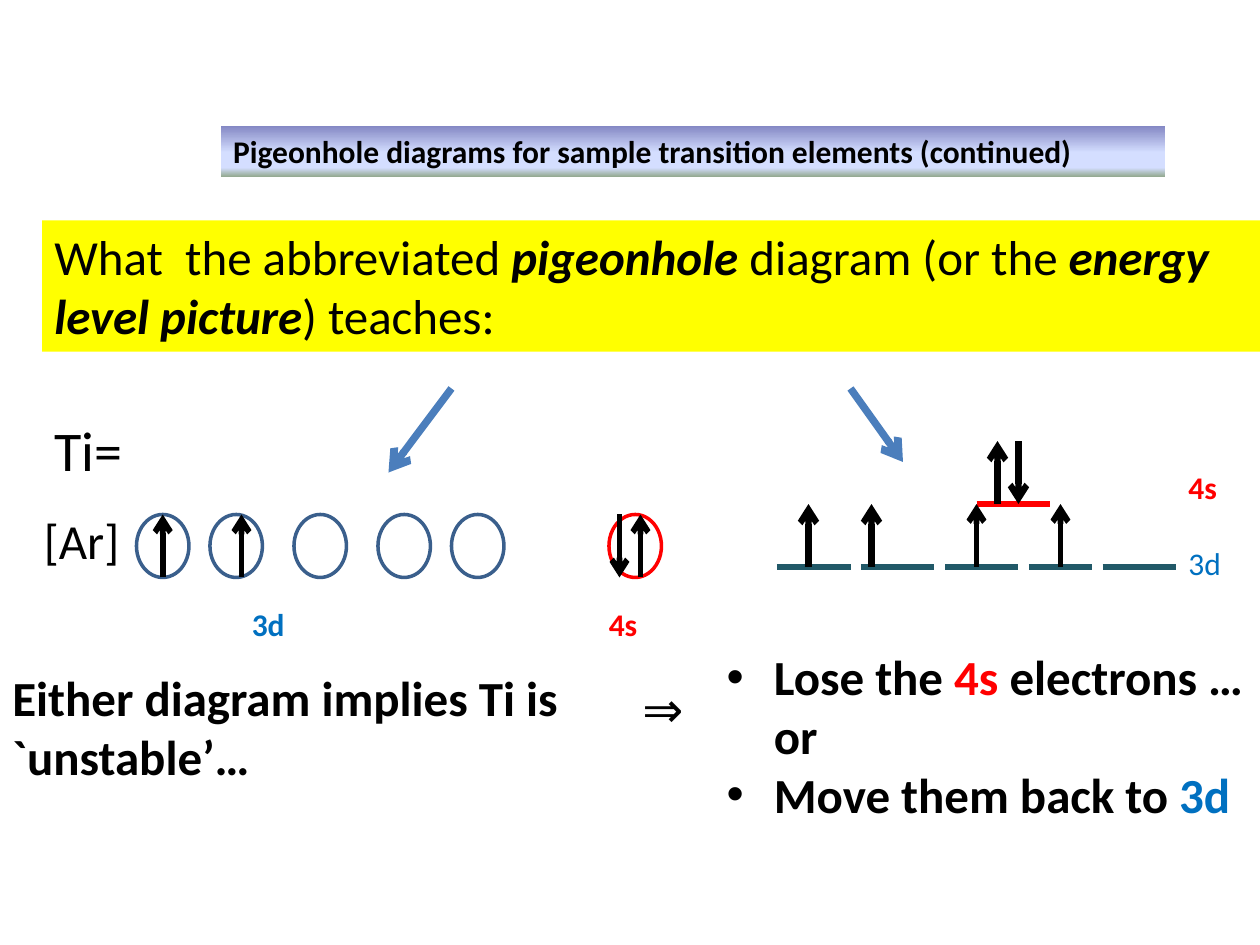
"""Build the slide on pigeonhole diagrams for titanium."""
from dataclasses import dataclass

import pptx
import pptx.dml.color
import pptx.enum.shapes
import pptx.enum.text
import pptx.oxml
import pptx.oxml.ns
import pptx.util

COLS, ROWS = 120, 90
WIDE, HIGH = pptx.util.Inches(10), pptx.util.Inches(7.5)
HUES = {
    "black": "000000", "red": "FF0000", "blue": "0070C0", "ring": "3A5F8C",
    "teal": "215968", "steel": "4B7EBC", "yellow": "FFFF00",
}
SHADES = {0: "8488C4", 53: "D4DEFF", 83: "D4DEFF", 100: "96AB94"}
FRAME = {
    "word_wrap": True,
    "auto_size": pptx.enum.text.MSO_AUTO_SIZE.NONE,
    "vertical_anchor": pptx.enum.text.MSO_ANCHOR.TOP,
}


@dataclass
class Run:
    """A stretch of text in one format."""
    text: str
    hue: str = "black"
    bold: bool = False
    slant: bool = False


@dataclass
class Box:
    """A place on the grid."""
    col: float
    row: float
    wide: float
    high: float

    def spot(self) -> dict:
        """Give the place as slide lengths."""
        return {"left": across(self.col), "top": down(self.row),
                "width": across(self.wide), "height": down(self.high)}


@dataclass
class Stroke:
    """A line between two grid points."""
    start: tuple
    end: tuple
    hue: str = "black"
    weight: float = 3.25
    arrow: bool = True


def across(cols: float) -> int:
    """Turn columns into a length."""
    return round(WIDE * cols / COLS)


def down(rows: float) -> int:
    """Turn rows into a length."""
    return round(HIGH * rows / ROWS)


def tint(name: str) -> pptx.dml.color.RGBColor:
    """Look up a named colour."""
    return pptx.dml.color.RGBColor.from_string(HUES[name])


def apply(thing, values: dict) -> None:
    """Set each value on the thing."""
    for name, value in values.items():
        setattr(thing, name, value)


def write(shape, lines: list, size: float, gap: float = 0) -> None:
    """Fill a shape with formatted lines."""
    frame = shape.text_frame
    apply(frame, FRAME)
    for spot, line in enumerate(lines):
        para = frame.add_paragraph() if spot else frame.paragraphs[0]
        apply(para, {"alignment": pptx.enum.text.PP_ALIGN.LEFT,
                     "space_before": pptx.util.Pt(gap if spot else 0)})
        for part in line:
            run = para.add_run()
            run.text = part.text
            apply(run.font, {"name": "Calibri", "size": pptx.util.Pt(size),
                             "bold": part.bold, "italic": part.slant})
            run.font.color.rgb = tint(part.hue)


def label(slide, box: Box, lines: list, size: float, gap: float = 0):
    """Add a text box."""
    shape = slide.shapes.add_textbox(**box.spot())
    write(shape, lines, size, gap)
    return shape


def ring(slide, col: float, hue: str) -> None:
    """Add an orbital ring."""
    shape = slide.shapes.add_shape(
        pptx.enum.shapes.MSO_SHAPE.OVAL, **Box(col, 49, 5, 6).spot())
    shape.shadow.inherit = False
    shape.fill.background()
    shape.line.color.rgb = tint(hue)
    shape.line.width = pptx.util.Pt(2)


def draw(slide, stroke: Stroke) -> None:
    """Add a line or an arrow."""
    (left, top), (right, base) = stroke.start, stroke.end
    line = slide.shapes.add_connector(
        pptx.enum.shapes.MSO_CONNECTOR.STRAIGHT,
        across(left), down(top), across(right), down(base))
    line.line.color.rgb = tint(stroke.hue)
    line.line.width = pptx.util.Pt(stroke.weight)
    props = line._element.spPr
    if stroke.arrow:
        tip = pptx.oxml.parse_xml(
            f'<a:tailEnd {pptx.oxml.ns.nsdecls("a")} type="arrow"/>')
        props.find(pptx.oxml.ns.qn("a:ln")).append(tip)
    props.append(pptx.oxml.parse_xml(
        f'<a:effectLst {pptx.oxml.ns.nsdecls("a")}/>'))


def blend(shape) -> None:
    """Give a shape the banner's blend of shades."""
    shape.fill.gradient()
    shape.fill.gradient_angle = 270
    stops = next(shape._element.spPr.iter(pptx.oxml.ns.qn("a:gsLst")))
    for stop in list(stops):
        stops.remove(stop)
    for place, shade in SHADES.items():
        stops.append(pptx.oxml.parse_xml(
            f'<a:gs {pptx.oxml.ns.nsdecls("a")} pos="{place * 1000}">'
            f'<a:srgbClr val="{shade}"/></a:gs>'))


def main() -> None:
    """Build and save the slide."""
    deck = pptx.Presentation()
    apply(deck, {"slide_width": WIDE, "slide_height": HIGH})
    slide = deck.slides.add_slide(deck.slide_layouts[1])
    title, body = slide.placeholders
    apply(title, Box(21, 12, 90, 4.8).spot())
    blend(title)
    write(title, [[Run(
        "Pigeonhole diagrams for sample transition elements (continued)",
        bold=True)]], 18)
    apply(body, Box(68, 61, 55, 18.1).spot())
    write(body, [
        [Run("Lose the ", bold=True), Run("4s ", "red", True),
         Run("electrons …or", bold=True)],
        [Run("Move them back to ", bold=True), Run("3d", "blue", True)],
    ], 28)

    lead = label(slide, Box(4, 21, 116, 12.5), [[
        Run("What  the abbreviated "), Run("pigeonhole", bold=True, slant=True),
        Run(" diagram (or the "),
        Run("energy level picture", bold=True, slant=True),
        Run(") teaches:")]], 28)
    lead.fill.solid()
    lead.fill.fore_color.rgb = tint("yellow")

    for col in (13, 20, 28, 36, 43):
        ring(slide, col, "ring")
    ring(slide, 58, "red")

    label(slide, Box(22.8, 57, 6, 5), [[Run("3d", "blue", True)]], 18)
    label(slide, Box(56.8, 57, 6, 5), [[Run("4s", "red", True)]], 18)
    label(slide, Box(3, 48, 10, 6.8), [[Run("[Ar]")]], 28)
    label(slide, Box(112, 44, 6, 12.1),
          [[Run("4s", "red", True)], [Run("3d", "blue")]], 18, 22)
    label(slide, Box(4, 39, 15, 7.7), [[Run("Ti=")]], 32)
    label(slide, Box(0, 63, 61, 12.5),
          [[Run("Either diagram implies Ti is `unstable’…", bold=True)]], 28)
    label(slide, Box(60, 64, 9, 6.8), [[Run("⇒")]], 28)

    shelves = [Stroke((col, 54), (col + span, 54), "teal", arrow=False)
               for col, span in ((74, 7), (82, 7), (90, 7), (98, 6), (105, 7))]
    shelves.append(Stroke((93, 48), (100, 48), "red", arrow=False))
    spins = [Stroke((col, 55), (col, 49)) for col in (15.5, 23, 61)]
    spins.append(Stroke((59, 49), (59, 55)))
    spins += [Stroke((col, 54), (col, 48), weight=3.5) for col in (77, 83)]
    spins += [Stroke((col, 54), (col, 48)) for col in (93, 101)]
    spins += [Stroke((95, 48), (95, 42), weight=3.5),
              Stroke((97, 42), (97, 48), weight=3.5)]
    guides = [Stroke((43, 37), (37, 45), "steel", 4.25),
              Stroke((81, 37), (86, 44), "steel", 4.25)]
    for stroke in shelves + spins + guides:
        draw(slide, stroke)
    deck.save("out.pptx")


if __name__ == "__main__":
    main()
